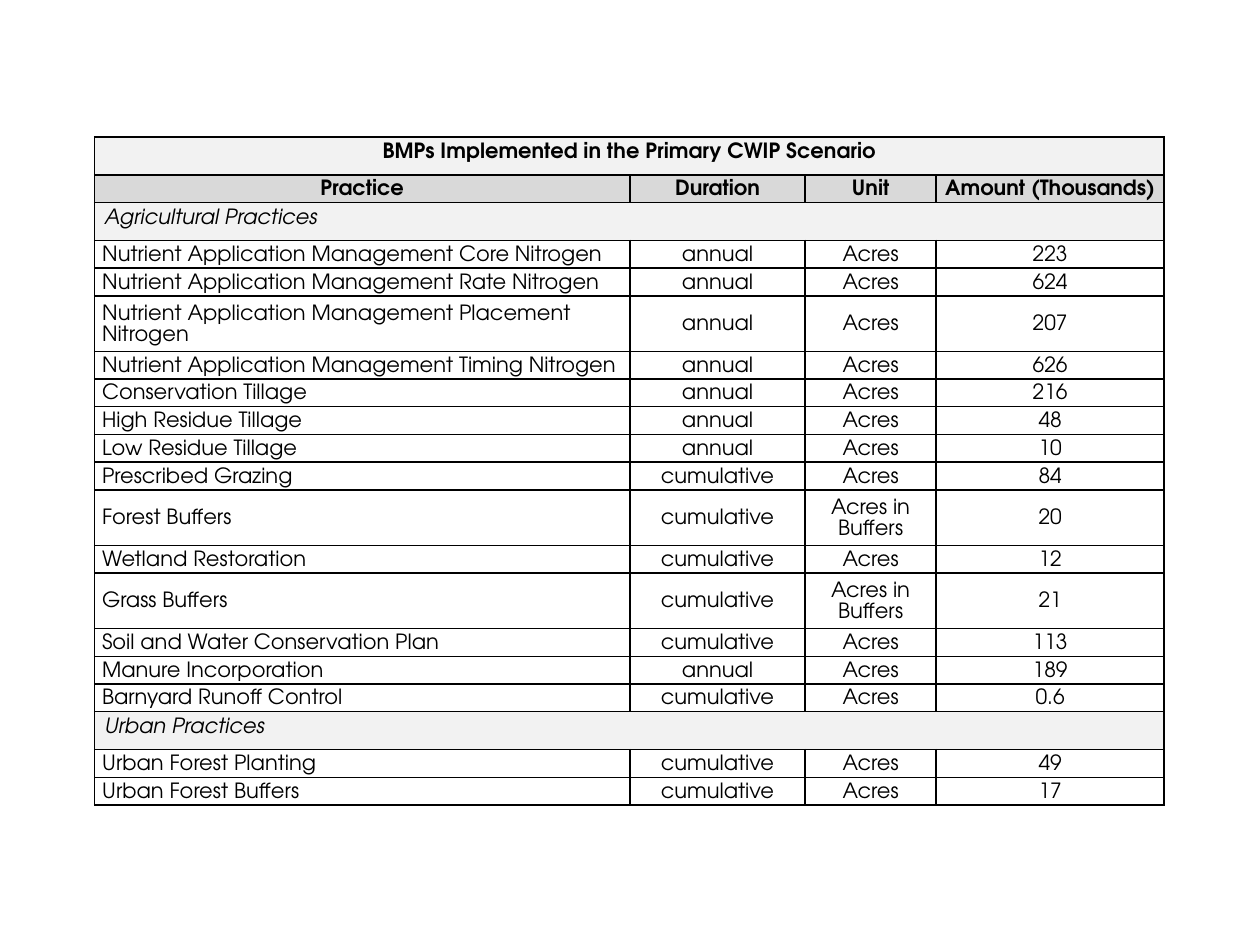
from dataclasses import dataclass

from lxml.etree import SubElement
from pptx import Presentation
from pptx.dml.color import RGBColor
from pptx.enum.text import MSO_ANCHOR as Anchor, PP_ALIGN as Align
from pptx.oxml.ns import qn
from pptx.util import Inches, Pt


@dataclass(frozen=True)
class Theme:
    """Colours, type and line sizes of the slide."""
    font: str = "TeX Gyre Adventor"
    size: float = 12
    line_spacing: float = 1.07
    ink: str = "000000"
    banner: str = "F2F2F2"
    header: str = "D9D9D9"
    body: str = "FFFFFF"
    border: float = 1


THEME = Theme()
TABLE_BOX = (0.075, 0.145, 0.849, 0.707)
COLUMN_WEIGHTS = (425, 139, 104, 181)
BANNER_ROW, SINGLE_ROW, DOUBLE_ROW = 30, 22, 44
BANNER_MARGINS = (0.08, 0.04, 0.08, 0.04)
CELL_MARGINS = (0.06, 0.01, 0.06, 0)

TITLE = "BMPs Implemented in the Primary CWIP Scenario"
HEADINGS = ("Practice", "Duration", "Unit", "Amount (Thousands)")
SECTIONS = {
    "Agricultural Practices": [
        ("Nutrient Application Management Core Nitrogen", "annual", "Acres", "223"),
        ("Nutrient Application Management Rate Nitrogen", "annual", "Acres", "624"),
        ("Nutrient Application Management Placement Nitrogen", "annual", "Acres", "207"),
        ("Nutrient Application Management Timing Nitrogen", "annual", "Acres", "626"),
        ("Conservation Tillage", "annual", "Acres", "216"),
        ("High Residue Tillage", "annual", "Acres", "48"),
        ("Low Residue Tillage", "annual", "Acres", "10"),
        ("Prescribed Grazing", "cumulative", "Acres", "84"),
        ("Forest Buffers", "cumulative", "Acres in Buffers", "20"),
        ("Wetland Restoration", "cumulative", "Acres", "12"),
        ("Grass Buffers", "cumulative", "Acres in Buffers", "21"),
        ("Soil and Water Conservation Plan", "cumulative", "Acres", "113"),
        ("Manure Incorporation", "annual", "Acres", "189"),
        ("Barnyard Runoff Control", "cumulative", "Acres", "0.6"),
    ],
    "Urban Practices": [
        ("Urban Forest Planting", "cumulative", "Acres", "49"),
        ("Urban Forest Buffers", "cumulative", "Acres", "17"),
    ],
}


def table_rows():
    """List the rows in order as (kind, texts)."""
    rows = [("title", (TITLE,)), ("header", HEADINGS)]
    for section, practices in SECTIONS.items():
        rows.append(("section", (section,)))
        rows.extend(("body", practice) for practice in practices)
    return rows


def row_weight(kind, texts):
    """Give a row its height weight, doubled where a text wraps."""
    if kind in ("title", "section"):
        return BANNER_ROW
    wraps = kind == "body" and (len(texts[0]) > 48 or len(texts[2]) > 8)
    return DOUBLE_ROW if wraps else SINGLE_ROW


def style_cell(cell, fill, margins):
    """Set the margins, borders and fill of a cell."""
    (cell.margin_left, cell.margin_top,
     cell.margin_right, cell.margin_bottom) = map(Inches, margins)
    properties = cell._tc.get_or_add_tcPr()
    for side in ("a:lnL", "a:lnR", "a:lnT", "a:lnB"):
        line = SubElement(properties, qn(side), w=str(Pt(THEME.border)))
        SubElement(SubElement(line, qn("a:solidFill")), qn("a:srgbClr"), val=THEME.ink)
    cell.fill.solid()
    cell.fill.fore_color.rgb = RGBColor.from_string(fill)


def write_cell(cell, text, align, bold, italic):
    """Write one paragraph into a cell and format it."""
    cell.text_frame.text = text
    paragraph = cell.text_frame.paragraphs[0]
    paragraph.alignment = align
    paragraph.line_spacing = THEME.line_spacing
    font = paragraph.runs[0].font
    font.name, font.size = THEME.font, Pt(THEME.size)
    font.bold, font.italic = bold, italic
    font.color.rgb = RGBColor.from_string(THEME.ink)


def fill_row(table, index, kind, texts):
    """Style and write one table row, merged across when it is a banner."""
    banner = kind in ("title", "section")
    fills = {"header": THEME.header, "body": THEME.body}
    cells = list(table.rows[index].cells)
    for cell in cells:
        style_cell(cell, fills.get(kind, THEME.banner),
                   BANNER_MARGINS if banner else CELL_MARGINS)
        cell.vertical_anchor = Anchor.TOP if banner else Anchor.MIDDLE
    if banner:
        cells[0].merge(cells[-1])
    for column, (cell, text) in enumerate(zip(cells, texts)):
        left = kind == "section" or (kind == "body" and column == 0)
        write_cell(cell, text, Align.LEFT if left else Align.CENTER,
                   kind in ("title", "header"), kind == "section")


def add_practice_table(slide, left, top, width, height):
    """Place the table of practices in the given box."""
    rows = table_rows()
    weights = [row_weight(*row) for row in rows]
    table = slide.shapes.add_table(len(rows), len(HEADINGS), left, top, width, height).table
    table.first_row = table.horz_banding = False
    for column, weight in zip(table.columns, COLUMN_WEIGHTS):
        column.width = int(width * weight / sum(COLUMN_WEIGHTS))
    for index, (row, weight) in enumerate(zip(rows, weights)):
        table.rows[index].height = int(height * weight / sum(weights))
        fill_row(table, index, *row)


def main():
    """Build the slide and save it."""
    presentation = Presentation()
    presentation.slide_width, presentation.slide_height = Inches(10), Inches(7.5)
    slide = presentation.slides.add_slide(presentation.slide_layouts[6])
    sides = (presentation.slide_width, presentation.slide_height) * 2
    add_practice_table(slide, *(int(side * share) for side, share in zip(sides, TABLE_BOX)))
    presentation.save("out.pptx")


if __name__ == "__main__":
    main()
